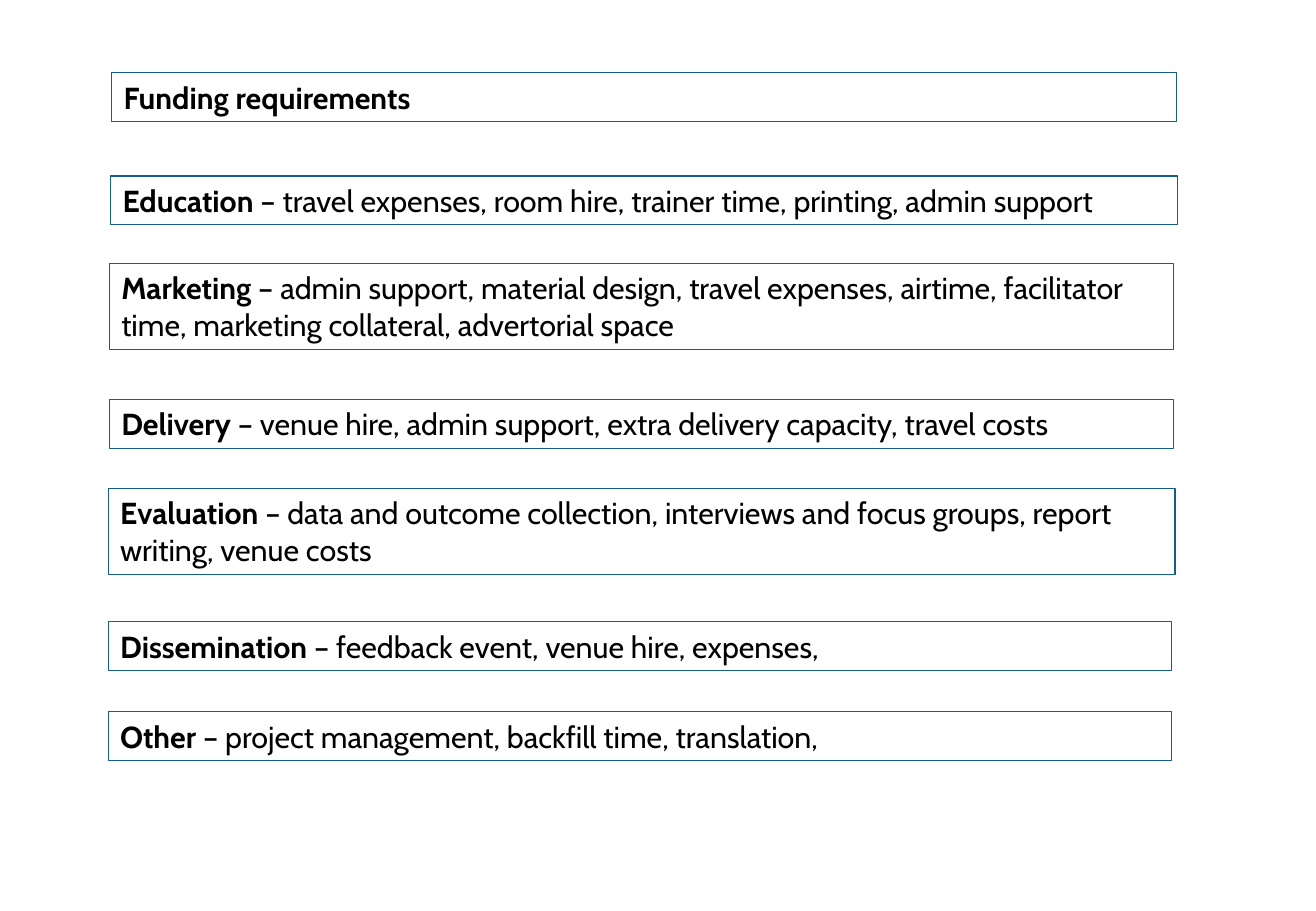
"""Build the funding requirements slide."""
from pptx import Presentation
from pptx.dml.color import RGBColor
from pptx.enum import text
from pptx.util import Inches, Pt

ITEMS = [
    (0.92, 0.6, 8.76, 1, "Funding requirements", ""),
    (0.91, 1.45, 8.78, 1, "Education",
     " – travel expenses, room hire, trainer time, printing, admin support"),
    (0.9, 2.17, 8.76, 2, "Marketing",
     " – admin support, material design, travel expenses, airtime, "
     "facilitator time, marketing collateral, advertorial space"),
    (0.9, 3.29, 8.76, 1, "Delivery",
     " – venue hire, admin support, extra delivery capacity, travel costs"),
    (0.89, 4.02, 8.78, 2, "Evaluation",
     " – data and outcome collection, interviews and focus groups, "
     "report writing, venue costs"),
    (0.89, 5.12, 8.75, 1, "Dissemination",
     " – feedback event, venue hire, expenses,"),
    (0.89, 5.86, 8.75, 1, "Other",
     " – project management, backfill time, translation,"),
]
BLACK = RGBColor(0, 0, 0)
TEAL = RGBColor(0x15, 0x60, 0x82)
PAD, LINE = 0.09, 0.31


def add_item(slide, left, top, width, lines, head, rest):
    """Add one outlined box with a bold heading."""
    box = slide.shapes.add_textbox(
        Inches(left), Inches(top), Inches(width), Inches(PAD + LINE * lines))
    box.line.color.rgb = TEAL
    box.line.width = Pt(0.75)
    frame = box.text_frame
    frame.word_wrap = True
    frame.auto_size = text.MSO_AUTO_SIZE.SHAPE_TO_FIT_TEXT
    para = frame.paragraphs[0]
    para.font.name = "Cabin"
    para.font.size = Pt(18)
    para.font.color.rgb = BLACK
    for words, bold in ((head, True), (rest, False)):
        if words:
            run = para.add_run()
            run.text = words
            run.font.bold = bold


def main():
    """Save the slide."""
    deck = Presentation()
    deck.slide_width, deck.slide_height = Inches(10.83), Inches(7.5)
    slide = deck.slides.add_slide(deck.slide_layouts[6])
    for item in ITEMS:
        add_item(slide, *item)
    deck.save("out.pptx")


if __name__ == "__main__":
    main()
